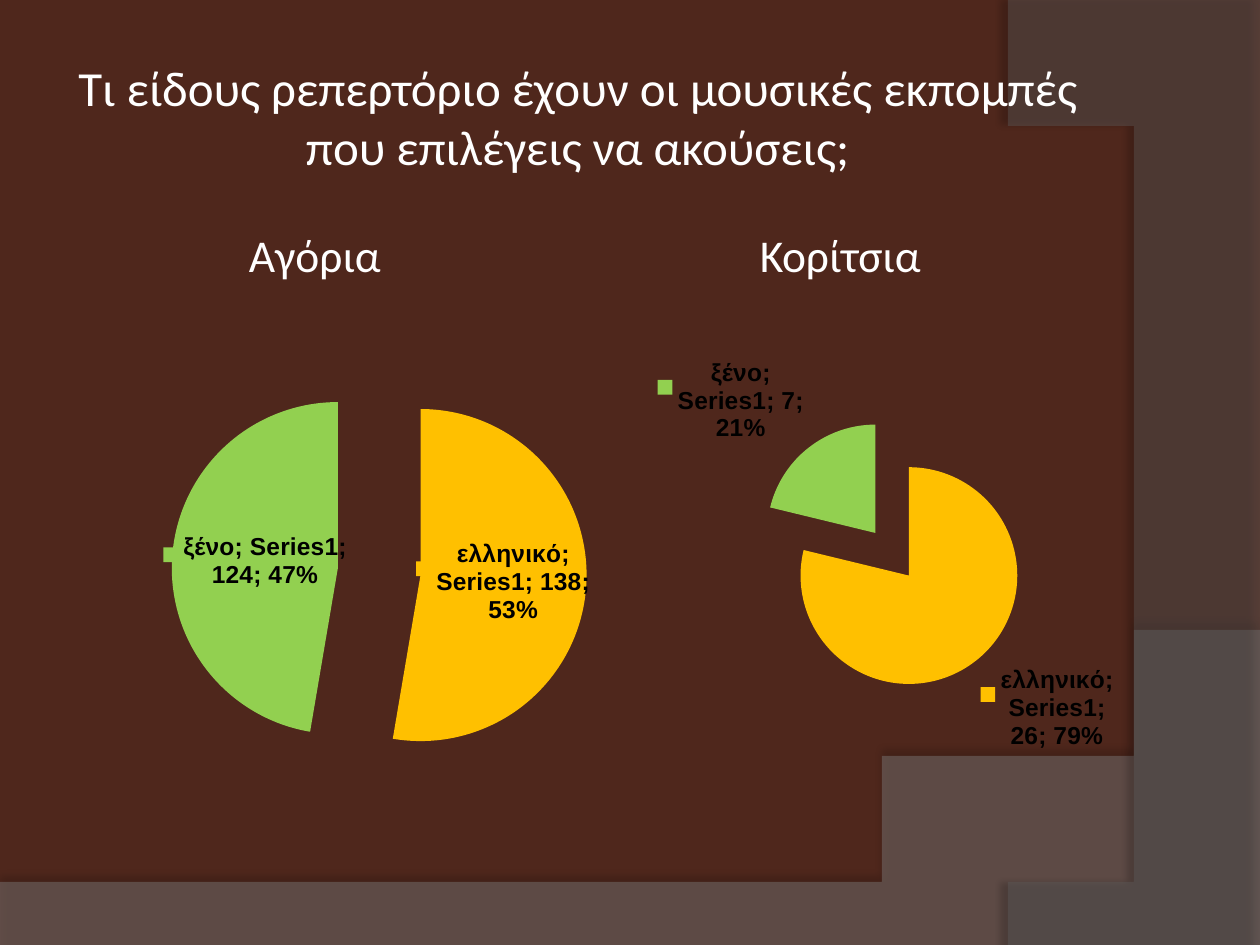
import pptx
import pptx.util
import pptx.chart.data
import pptx.dml.color
import pptx.enum.chart
import pptx.enum.text
import pptx.oxml
import pptx.oxml.ns

Inches, Pt = pptx.util.Inches, pptx.util.Pt
LABEL = pptx.enum.chart.XL_LABEL_POSITION
NS = pptx.oxml.ns.nsdecls("a", "c")

WHITE, BLACK, YELLOW, GREEN = "FFFFFF", "000000", "FFC000", "92D050"
BACKGROUND = "4F271C"

TITLE = ("Τι είδους ρεπερτόριο έχουν οι μουσικές εκπομπές που επιλέγεις να ακούσεις;",
         (0.5, 0.3, 8.17, 1.25), 28, pptx.enum.text.MSO_ANCHOR.MIDDLE)
HEADINGS = [
    (name, (left, 1.75, 4, 4.95), 26, pptx.enum.text.MSO_ANCHOR.TOP)
    for name, left in (("Αγόρια", 0.5), ("Κορίτσια", 4.67))
]

# Each wave: corner points with one Bezier curve (start, control, control, end),
# fill, opacity, shadow opacity, blur, distance and direction
WAVES = [
    ([(0, 7.51), (10, 7.51)], [(10, 5.2), (5.59, 7.29), (3.91, 7.19), (0, 7.05)],
     "7F7F7F", 45, (35, 4, 3.5, 270)),
    ([(10, 0.02), (10, 7.5)], [(8.21, 7.5), (9.35, 6.19), (10.18, 3), (8, 0)],
     "5E5E5E", 40, (45, 4, 4, 180)),
]

PIES = [
    dict(box=(4.45, 2.66, 5.16, 3.91), plot=(0.3, 0.17, 0.42, 0.55),
         slices=[("ελληνικό", 26, YELLOW), ("ξένο", 7, GREEN)],
         position=LABEL.OUTSIDE_END),
    dict(box=(0.16, 2.34, 5.23, 4.53), plot=(0.23, 0.12, 0.63, 0.73),
         slices=[("ελληνικό", 138, YELLOW), ("", None, "FEB80A"), ("ξένο", 124, GREEN)],
         position=LABEL.CENTER),
]


def rgb(color):
    return pptx.dml.color.RGBColor.from_string(color)


def paint(fill, color):
    fill.solid()
    fill.fore_color.rgb = rgb(color)


def set_font(font, name, size, color, bold=False):
    font.name, font.size, font.bold = name, Pt(size), bold
    font.color.rgb = rgb(color)


def bezier(p0, p1, p2, p3, steps=48):
    """Points along a cubic Bezier curve."""
    for i in range(steps + 1):
        t = i / steps
        u = 1 - t
        yield tuple(u**3 * a + 3 * u * u * t * b + 3 * u * t * t * c + t**3 * d
                    for a, b, c, d in zip(p0, p1, p2, p3))


def add_wave(slide, corners, curve, color, opacity, shadow):
    points = corners + list(bezier(*curve))
    builder = slide.shapes.build_freeform(*points[0], scale=Inches(1))
    builder.add_line_segments(points[1:], close=True)
    sp = builder.convert_to_shape()
    paint(sp.fill, color)
    sp.line.fill.background()
    fill_color = sp.fill._xPr.find(".//" + pptx.oxml.ns.qn("a:srgbClr"))
    fill_color.append(pptx.oxml.parse_xml(f'<a:alpha {NS} val="{opacity * 1000}"/>'))
    alpha, blur, distance, direction = shadow
    sp._element.spPr.append(pptx.oxml.parse_xml(
        f'<a:effectLst {NS}><a:outerShdw blurRad="{Pt(blur)}" dist="{Pt(distance)}" '
        f'dir="{direction * 60000}" algn="ctr" rotWithShape="0"><a:srgbClr val="{BLACK}">'
        f'<a:alpha val="{alpha * 1000}"/></a:srgbClr></a:outerShdw></a:effectLst>'))


def add_text(slide, text, box, size, anchor):
    tf = slide.shapes.add_textbox(*map(Inches, box)).text_frame
    tf.word_wrap = True
    tf.vertical_anchor = anchor
    tf.margin_left = tf.margin_right = Inches(0.05)
    p = tf.paragraphs[0]
    p.text = text
    p.alignment = pptx.enum.text.PP_ALIGN.CENTER
    set_font(p.font, "Calibri", size, WHITE)


def add_pie(slide, box, plot, slices, position):
    data = pptx.chart.data.CategoryChartData()
    names, values, colors = zip(*slices)
    data.categories = names
    data.add_series("Series1", values)
    chart = slide.shapes.add_chart(
        pptx.enum.chart.XL_CHART_TYPE.PIE, *map(Inches, box), data).chart
    chart.has_legend = chart.has_title = False
    set_font(chart.font, "Arial", 10, WHITE)

    pie = chart.plots[0]
    pie.vary_by_categories = True
    series = pie.series[0]
    for i, color in enumerate(colors):
        paint(series.points[i].format.fill, color)
    first_point = series._element.find(pptx.oxml.ns.qn("c:dPt"))
    first_point.addprevious(pptx.oxml.parse_xml(f'<c:explosion {NS} val="25"/>'))

    labels = series.data_labels
    labels.show_value = labels.show_percentage = True
    labels.show_category_name = labels.show_series_name = labels.show_legend_key = True
    labels.position = position
    set_font(labels.font, "Arial", 14, BLACK, bold=True)
    last_flag = labels._element.find(pptx.oxml.ns.qn("c:showBubbleSize"))
    if last_flag is None:
        last_flag = labels._element.find(pptx.oxml.ns.qn("c:showPercent"))
    last_flag.addnext(pptx.oxml.parse_xml(f"<c:separator {NS}>; </c:separator>"))

    area = chart._chartSpace.chart.plotArea
    for old in area.findall(pptx.oxml.ns.qn("c:layout")):
        area.remove(old)
    sizes = "".join(f'<c:{k} val="{v}"/>' for k, v in zip("xywh", plot))
    area.insert(0, pptx.oxml.parse_xml(
        f'<c:layout {NS}><c:manualLayout><c:layoutTarget val="inner"/>'
        f'<c:xMode val="edge"/><c:yMode val="edge"/>{sizes}</c:manualLayout></c:layout>'))


def main():
    prs = pptx.Presentation()
    prs.slide_width, prs.slide_height = Inches(10), Inches(7.5)
    s = prs.slides.add_slide(prs.slide_layouts[6])
    paint(s.background.fill, BACKGROUND)
    for wave in WAVES:
        add_wave(s, *wave)
    for text in [TITLE] + HEADINGS:
        add_text(s, *text)
    for pie in PIES:
        add_pie(s, **pie)
    prs.save("out.pptx")


if __name__ == "__main__":
    main()
